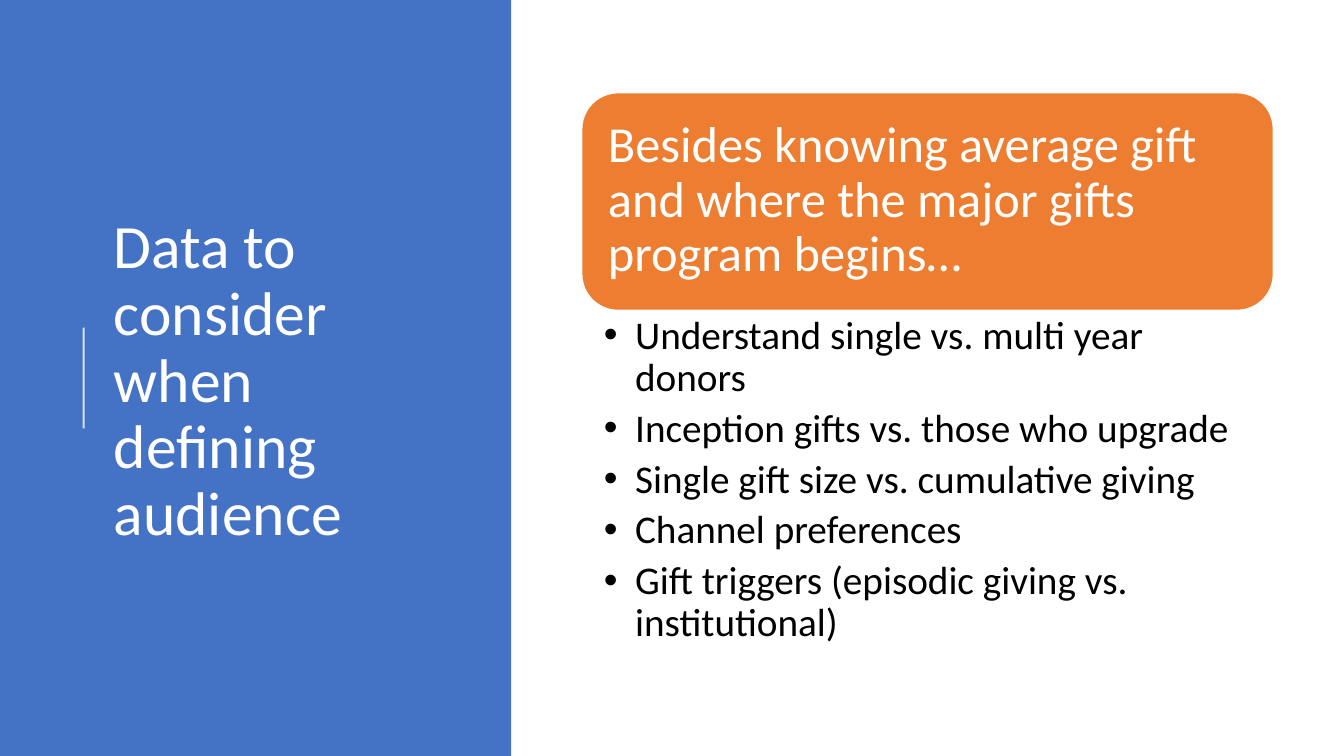
from lxml.etree import SubElement
from pptx import Presentation
from pptx.dml.color import RGBColor
from pptx.enum.shapes import MSO_CONNECTOR, MSO_SHAPE
from pptx.enum.text import MSO_ANCHOR, PP_ALIGN
from pptx.oxml.ns import qn
from pptx.util import Inches, Pt

BLUE = RGBColor(0x44, 0x72, 0xC4)
ORANGE = RGBColor(0xED, 0x7D, 0x31)
WHITE = RGBColor(0xFF, 0xFF, 0xFF)
BLACK = RGBColor(0x00, 0x00, 0x00)

DATA_POINTS = [
    "Understand single vs. multi year donors",
    "Inception gifts vs. those who upgrade",
    "Single gift size vs. cumulative giving",
    "Channel preferences",
    "Gift triggers (episodic giving vs. institutional)",
]


def apply(target, values):
    for name, value in values.items():
        setattr(target, name, value)


class SlideBuilder:
    font_name = "Calibri"
    line_spacing = 0.9
    bullet_indent = Inches(0.31)

    def __init__(self, slide):
        self.slide = slide

    def panel(self, kind, box, fill, outline=None):
        shape = self.slide.shapes.add_shape(kind, *map(Inches, box))
        shape.shadow.inherit = False
        shape.fill.solid()
        shape.fill.fore_color.rgb = fill
        if outline is None:
            shape.line.fill.background()
        else:
            shape.line.color.rgb = outline
            shape.line.width = Pt(1)

    def rule(self, start, end, color, width, opacity):
        line = self.slide.shapes.add_connector(
            MSO_CONNECTOR.STRAIGHT, *map(Inches, start + end))
        line.line.color.rgb = color
        line.line.width = Pt(width)
        properties = line._element.spPr
        SubElement(properties.find(".//" + qn("a:srgbClr")), qn("a:alpha"),
                   val=str(opacity * 1000))
        SubElement(properties, qn("a:effectLst"))

    def text(self, box, paragraphs, size, color, insets, anchor,
             space_after=0, bullet=None):
        frame = self.slide.shapes.add_textbox(*map(Inches, box)).text_frame
        left, top, right, bottom = map(Inches, insets)
        apply(frame, {"word_wrap": True, "vertical_anchor": anchor,
                      "margin_left": left, "margin_top": top,
                      "margin_right": right, "margin_bottom": bottom})
        for index, words in enumerate(paragraphs):
            paragraph = frame.paragraphs[0] if index == 0 else frame.add_paragraph()
            paragraph.text = words
            apply(paragraph, {"alignment": PP_ALIGN.LEFT,
                              "line_spacing": self.line_spacing,
                              "space_after": Pt(space_after)})
            if bullet:
                self.add_bullet(paragraph, bullet)
            apply(paragraph.font, {"name": self.font_name, "size": Pt(size)})
            paragraph.font.color.rgb = color

    def add_bullet(self, paragraph, mark):
        properties = paragraph._p.get_or_add_pPr()
        properties.set("marL", str(self.bullet_indent))
        properties.set("indent", str(-self.bullet_indent))
        SubElement(properties, qn("a:buFont"), typeface="Arial")
        SubElement(properties, qn("a:buChar"), char=mark)


def main():
    deck = Presentation()
    apply(deck, {"slide_width": Inches(13.33), "slide_height": Inches(7.5)})
    builder = SlideBuilder(deck.slides.add_slide(deck.slide_layouts[6]))

    # Title panel
    builder.panel(MSO_SHAPE.RECTANGLE, (0, 0, 5.07, 7.5), BLUE)
    builder.text((1.03, 0.78, 3.69, 6.02),
                 ["Data to consider when defining audience"], 44, WHITE,
                 (0.1, 0.05, 0.1, 0.05), MSO_ANCHOR.MIDDLE)
    builder.rule((0.83, 4.25), (0.83, 3.25), WHITE, 1.5, 80)

    # Lead statement
    builder.panel(MSO_SHAPE.ROUNDED_RECTANGLE, (5.77, 0.92, 6.86, 2.16),
                  ORANGE, WHITE)
    builder.text((5.88, 1.02, 6.64, 1.95),
                 ["Besides knowing average gift and where the major gifts "
                  "program begins…"], 36, WHITE,
                 (0.15, 0.15, 0.15, 0.15), MSO_ANCHOR.MIDDLE)

    # Data points
    builder.text((5.77, 3.08, 6.86, 3.5), DATA_POINTS, 28, BLACK,
                 (0.22, 0.05, 0.28, 0.05), MSO_ANCHOR.TOP,
                 space_after=6, bullet="•")

    deck.save("out.pptx")


if __name__ == "__main__":
    main()
